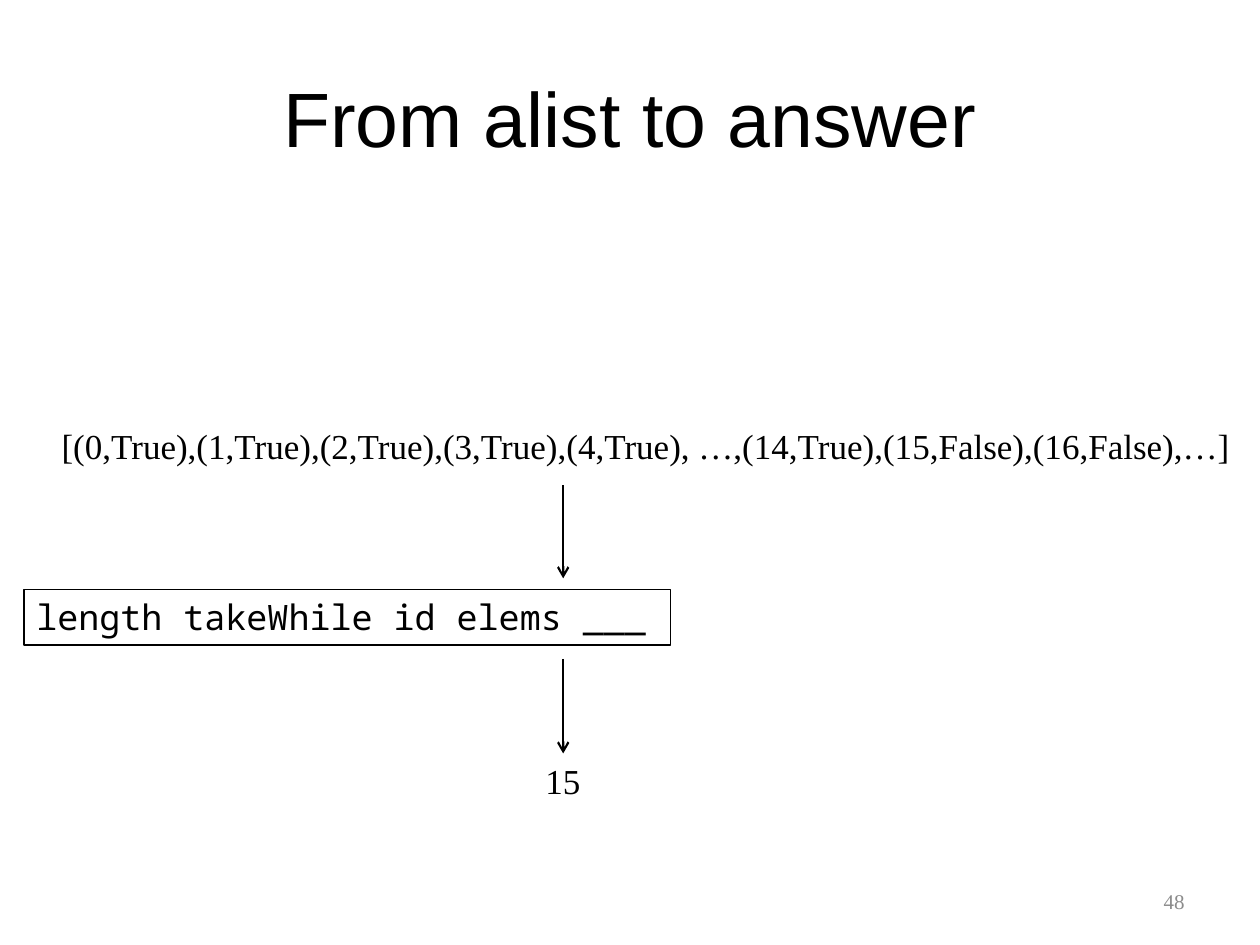
from dataclasses import dataclass

import pptx
import pptx.dml.color
import pptx.enum.shapes
import pptx.enum.text
import pptx.oxml.ns
import pptx.slide
import pptx.util
from lxml import etree
from pptx.util import Inches

ALIGN = pptx.enum.text.PP_ALIGN
ANCHOR = pptx.enum.text.MSO_ANCHOR
BLACK = "000000"
SERIF = "Times New Roman"


@dataclass
class Label:
    text: str
    left: float
    top: float
    width: float
    height: float
    size: float = 20
    font: str = SERIF
    color: str = BLACK
    align: ALIGN = ALIGN.LEFT
    anchor: ANCHOR = ANCHOR.TOP
    outlined: bool = False


@dataclass
class Arrow:
    x: float
    top: float
    bottom: float


LABELS = [
    Label("From alist to answer", 0.5, 0.3, 9, 1.25, size=44, font="Arial",
          align=ALIGN.CENTER, anchor=ANCHOR.MIDDLE),
    Label("48", 7.17, 6.95, 2.33, 0.4, size=12, color="8C8C8C",
          align=ALIGN.RIGHT, anchor=ANCHOR.MIDDLE),
    Label("[(0,True),(1,True),(2,True),(3,True),(4,True), "
          "…,(14,True),(15,False),(16,False),…]", 0.39, 3.32, 9.54, 0.44),
    Label("length takeWhile id elems ___", 0.19, 4.68, 5.13, 0.44,
          font="Noto Sans Mono", outlined=True),
    Label("15", 4.23, 5.98, 0.49, 0.44),
]
ARROWS = [Arrow(4.47, 3.85, 4.59), Arrow(4.47, 5.23, 5.98)]


def rgb(color: str) -> pptx.dml.color.RGBColor:
    return pptx.dml.color.RGBColor.from_string(color)


def draw_label(slide: pptx.slide.Slide, label: Label) -> None:
    box = slide.shapes.add_textbox(Inches(label.left), Inches(label.top),
                                   Inches(label.width), Inches(label.height))
    if label.outlined:
        box.line.color.rgb = rgb(BLACK)
        box.line.width = pptx.util.Pt(0.75)
    frame = box.text_frame
    frame.word_wrap = True
    frame.vertical_anchor = label.anchor
    paragraph = frame.paragraphs[0]
    paragraph.alignment = label.align
    run = paragraph.add_run()
    run.text = label.text
    run.font.size = pptx.util.Pt(label.size)
    run.font.name = label.font
    run.font.color.rgb = rgb(label.color)


def draw_arrow(slide: pptx.slide.Slide, arrow: Arrow) -> None:
    line = slide.shapes.add_connector(
        pptx.enum.shapes.MSO_CONNECTOR.STRAIGHT,
        Inches(arrow.x), Inches(arrow.top), Inches(arrow.x), Inches(arrow.bottom))
    line.line.color.rgb = rgb(BLACK)
    line.line.width = pptx.util.Pt(1.25)
    qn = pptx.oxml.ns.qn
    properties = line._element.spPr
    etree.SubElement(properties.find(qn("a:ln")), qn("a:tailEnd"), type="arrow")
    etree.SubElement(properties, qn("a:effectLst"))


def main() -> None:
    deck = pptx.Presentation()
    deck.slide_width, deck.slide_height = Inches(10), Inches(7.5)
    slide = deck.slides.add_slide(deck.slide_layouts[6])
    for label in LABELS:
        draw_label(slide, label)
    for arrow in ARROWS:
        draw_arrow(slide, arrow)
    deck.save("out.pptx")


if __name__ == "__main__":
    main()
